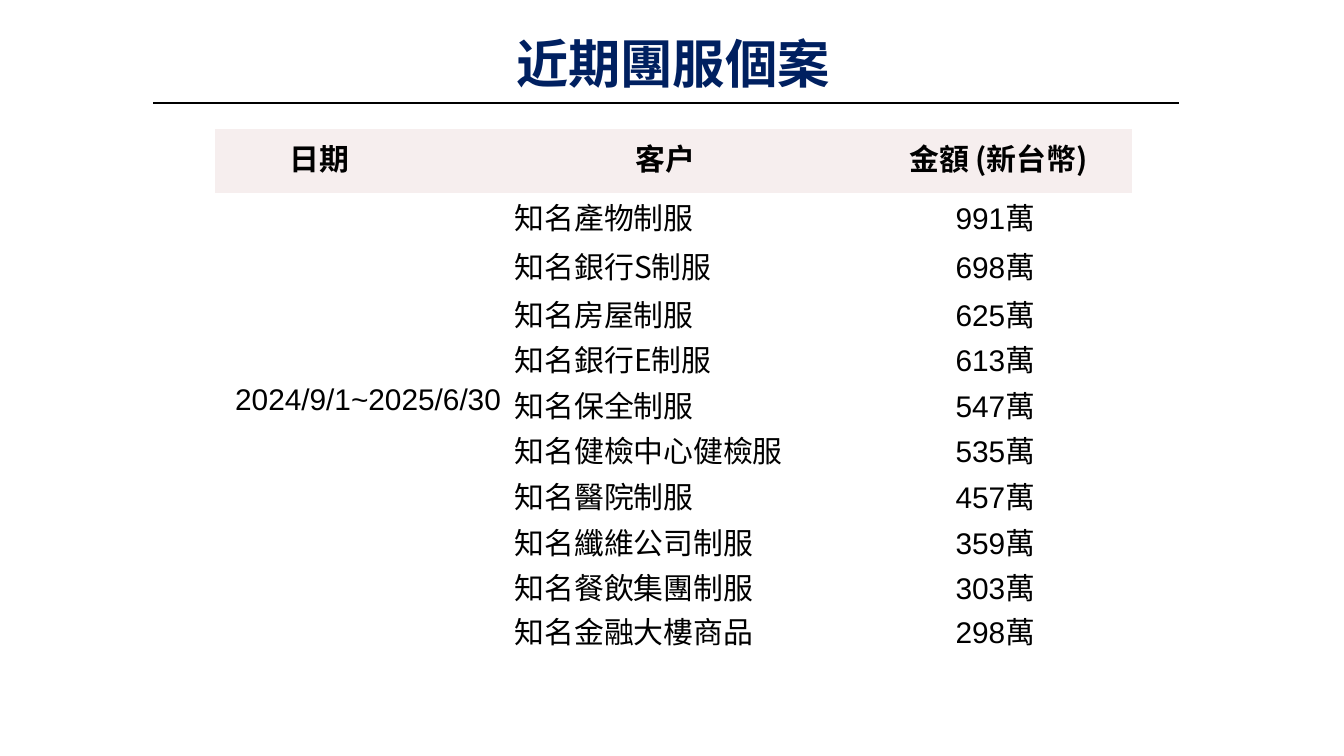
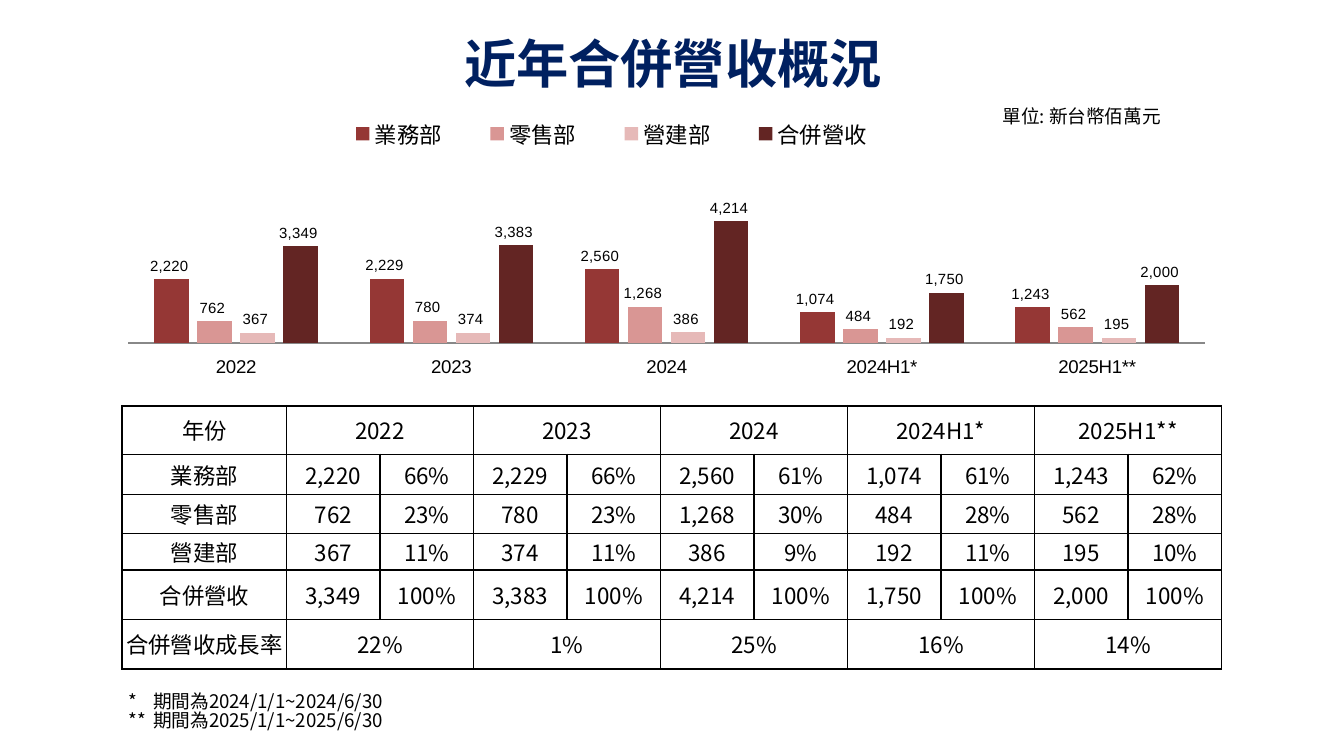
from dataclasses import dataclass

from lxml import etree
from pptx import Presentation
from pptx import util as u
from pptx.chart import data as chart_data
from pptx.dml import color as dml
from pptx.enum import chart as charts, shapes, text
from pptx.oxml import ns

Pt = u.Pt
CENTER, LEFT = text.PP_ALIGN.CENTER, text.PP_ALIGN.LEFT
MIDDLE, TOP = text.MSO_ANCHOR.MIDDLE, text.MSO_ANCHOR.TOP
NO_GRID_STYLE = "{2D5ABB26-0587-4C30-8999-92F81FD0307C}"


@dataclass(frozen=True)
class Theme:
    navy: str = "002060"
    black: str = "000000"
    white: str = "FFFFFF"
    header: str = "F6EEEE"
    axis: str = "888888"
    series: tuple = ("953735", "D99694", "E6B9B8", "632523")
    heading_font: str = "Noto Sans CJK TC"
    figure_font: str = "Noto Sans CJK SC"
    latin_font: str = "Arial"
    title: float = 28
    case: float = 16
    body: float = 12
    note: float = 10
    label: float = 8


def assign(target, formats):
    for name, value in formats.items():
        setattr(target, name, value)


def rgb(value):
    return dml.RGBColor.from_string(value)


def manual_layout(x, y, width, height, inner=False):
    layout = etree.Element(ns.qn("c:layout"))
    manual = etree.SubElement(layout, ns.qn("c:manualLayout"))
    values = {"layoutTarget": "inner"} if inner else {}
    values |= {"xMode": "edge", "yMode": "edge", "x": x, "y": y, "w": width, "h": height}
    for name, value in values.items():
        etree.SubElement(manual, ns.qn(f"c:{name}"), val=str(value))
    return layout


class Deck:
    def __init__(self, theme):
        self.theme = theme
        self.presentation = Presentation()
        assign(self.presentation, {"slide_width": Pt(720), "slide_height": Pt(405)})
        self.slide = None

    # Text
    def style_font(self, font, size, name=None, color=None, bold=False):
        name = name or self.theme.heading_font
        assign(font, {"size": Pt(size), "name": name, "bold": bold})
        font.color.rgb = rgb(color or self.theme.black)
        east_asian = self.theme.heading_font if name == self.theme.latin_font else name
        etree.SubElement(font._rPr, ns.qn("a:ea"), typeface=east_asian)

    def fill_text(self, frame, lines, align=LEFT, spacing=None, hanging=0, **font):
        for index, line in enumerate(lines):
            paragraph = frame.paragraphs[0] if index == 0 else frame.add_paragraph()
            assign(paragraph, {"alignment": align, "line_spacing": spacing})
            if hanging:
                properties = paragraph._p.get_or_add_pPr()
                properties.set("marL", str(Pt(hanging)))
                properties.set("indent", str(-Pt(hanging)))
            run = paragraph.add_run()
            run.text = line
            self.style_font(run.font, **font)

    def text_box(self, box, lines, anchor=TOP, fill=None, **formats):
        shape = self.slide.shapes.add_textbox(*map(Pt, box))
        if fill:
            shape.fill.solid()
            shape.fill.fore_color.rgb = rgb(fill)
        margins = {f"margin_{side}": Pt(3.6) for side in ("left", "top", "right", "bottom")}
        assign(shape.text_frame, {"word_wrap": True, "vertical_anchor": anchor} | margins)
        self.fill_text(shape.text_frame, lines, **formats)

    # Slide frame
    def add_slide(self, title, ruled=True):
        self.slide = self.presentation.slides.add_slide(self.presentation.slide_layouts[6])
        if ruled:
            self.rule(82, 631.5, 55.4)
        self.text_box((36.5, 0, 648, 67.5), [title], MIDDLE,
                      fill=None if ruled else self.theme.white, align=CENTER,
                      size=self.theme.title, color=self.theme.navy, bold=True)

    def rule(self, left, right, y):
        line = self.slide.shapes.add_connector(
            shapes.MSO_CONNECTOR.STRAIGHT, Pt(left), Pt(y), Pt(right), Pt(y))
        line.line.width = Pt(1)
        line.line.color.rgb = rgb(self.theme.black)
        etree.SubElement(line._element.spPr, ns.qn("a:effectLst"))

    # Tables
    def table(self, left, top, widths, heights):
        table = self.slide.shapes.add_table(
            len(heights), len(widths), Pt(left), Pt(top), Pt(sum(widths)), Pt(sum(heights))).table
        assign(table, {"first_row": False, "horz_banding": False})
        table._tbl.tblPr.find(ns.qn("a:tableStyleId")).text = NO_GRID_STYLE
        for column, width in zip(table.columns, widths):
            column.width = Pt(width)
        for row, height in zip(table.rows, heights):
            row.height = Pt(height)
        return table

    def cell(self, cell, value, margins=(0.7, 0, 0.7, 0), anchor=MIDDLE, fill=None, **formats):
        sides = ("margin_left", "margin_top", "margin_right", "margin_bottom")
        assign(cell, dict(zip(sides, map(Pt, margins))) | {"vertical_anchor": anchor})
        if fill:
            cell.fill.solid()
            cell.fill.fore_color.rgb = rgb(fill)
        else:
            cell.fill.background()
        self.fill_text(cell.text_frame, [value], **formats)

    def grid(self, table):
        for cell in (cell for row in table.rows for cell in row.cells):
            properties = cell._tc.get_or_add_tcPr()
            for side in ("lnL", "lnR", "lnT", "lnB"):
                line = etree.SubElement(properties, ns.qn(f"a:{side}"), w=str(Pt(1)))
                fill = etree.SubElement(line, ns.qn("a:solidFill"))
                etree.SubElement(fill, ns.qn("a:srgbClr"), val=self.theme.black)

    # Chart
    def column_chart(self, box, categories, series):
        theme, number_format = self.theme, '#,##0" "'
        data = chart_data.CategoryChartData()
        data.categories = categories
        for name, values in series.items():
            data.add_series(name, values)
        chart = self.slide.shapes.add_chart(
            charts.XL_CHART_TYPE.COLUMN_CLUSTERED, *map(Pt, box), data).chart
        self.style_font(chart.font, theme.note, "Calibri")
        assign(chart, {"has_title": False, "has_legend": True})

        # Legend
        assign(chart.legend, {"position": charts.XL_LEGEND_POSITION.TOP,
                              "include_in_layout": True})
        self.style_font(chart.legend.font, theme.body)
        position = chart.legend._element.find(ns.qn("c:legendPos"))
        position.addnext(manual_layout(0.19, 0.01, 0.54, 0.13))

        # Plot
        area = chart._chartSpace.chart.plotArea
        for layout in area.findall(ns.qn("c:layout")):
            area.remove(layout)
        area.insert(0, manual_layout(0.02, 0.33, 0.98, 0.55, inner=True))
        plot = chart.plots[0]
        assign(plot, {"gap_width": 150, "overlap": -25, "vary_by_categories": False})
        for item, color in zip(plot.series, theme.series):
            item.format.fill.solid()
            item.format.fill.fore_color.rgb = rgb(color)
            labels = item.data_labels
            assign(labels, {"show_value": True, "number_format": number_format,
                            "number_format_is_linked": False,
                            "position": charts.XL_LABEL_POSITION.OUTSIDE_END})
            self.style_font(labels.font, theme.label, theme.latin_font)

        # Axes
        ticks = charts.XL_TICK_LABEL_POSITION
        for axis, tick_labels, size in ((chart.category_axis, ticks.LOW, theme.note),
                                        (chart.value_axis, ticks.NONE, theme.label)):
            assign(axis, {"major_tick_mark": charts.XL_TICK_MARK.NONE,
                          "minor_tick_mark": charts.XL_TICK_MARK.NONE,
                          "tick_label_position": tick_labels,
                          "has_major_gridlines": False})
            self.style_font(axis.tick_labels.font, size, theme.latin_font)
        chart.category_axis.format.line.width = Pt(1)
        chart.category_axis.format.line.color.rgb = rgb(theme.axis)
        chart.value_axis.format.line.fill.background()
        chart.value_axis.major_unit = 550
        assign(chart.value_axis.tick_labels, {"number_format": number_format,
                                              "number_format_is_linked": False})


CASES = {
    "知名產物制服": 991, "知名銀行S制服": 698, "知名房屋制服": 625, "知名銀行E制服": 613,
    "知名保全制服": 547, "知名健檢中心健檢服": 535, "知名醫院制服": 457,
    "知名纖維公司制服": 359, "知名餐飲集團制服": 303, "知名金融大樓商品": 298,
}
PERIODS = ["2022", "2023", "2024", "2024H1*", "2025H1**"]
TOTAL = "合併營收"
REVENUE = {
    "業務部": [2220, 2229, 2560, 1074, 1243],
    "零售部": [762, 780, 1268, 484, 562],
    "營建部": [367, 374, 386, 192, 195],
    TOTAL: [3349, 3383, 4214, 1750, 2000],
}
GROWTH = ["22%", "1%", "25%", "16%", "14%"]


def build_cases(deck):
    theme = deck.theme
    deck.add_slide("近期團服個案")
    heights = [34.5, 25, 27.5, 24, 24.5, 24, 24.5, 25, 24, 24, 24]
    table = deck.table(115.2, 69.1, [160, 185, 146], heights)

    # Header, each heading with its own indent
    headings = (("日期", 40), ("客戶", 65.5), ("金額 (新台幣)", 27))
    for column, (heading, indent) in enumerate(headings):
        deck.cell(table.cell(0, column), heading, (indent, 3.6, 0, 3.6), TOP,
                  theme.header, size=theme.case, bold=True)

    # One period for all cases
    table.cell(1, 0).merge(table.cell(len(CASES), 0))
    deck.cell(table.cell(1, 0), "2024/9/1~2025/6/30", (8, 0, 4, 25), align=CENTER,
              size=theme.case, name=theme.latin_font)
    for row, (client, amount) in enumerate(CASES.items(), 1):
        deck.cell(table.cell(row, 1), client, size=theme.case)
        deck.cell(table.cell(row, 2), f"{amount}萬", align=CENTER,
                  size=theme.case, name=theme.latin_font)


def build_revenue(deck):
    theme = deck.theme
    deck.add_slide("近年合併營收概況", ruled=False)
    deck.column_chart((57, 61.2, 589, 141), PERIODS, REVENUE)

    # Revenue table: two columns, value and share, for each period
    table = deck.table(65.5, 217.4, [88] + [50.1] * 2 * len(PERIODS),
                       [26, 21.5, 21, 19.5, 26.5, 26.5])
    deck.grid(table)
    label = {"align": CENTER, "size": theme.body}
    figure = label | {"name": theme.figure_font}
    for row, name in enumerate(["年份", *REVENUE, "合併營收成長率"]):
        deck.cell(table.cell(row, 0), name, **label)
    for index, period in enumerate(PERIODS):
        column = 1 + 2 * index
        for row, value in ((0, period), (len(REVENUE) + 1, GROWTH[index])):
            table.cell(row, column).merge(table.cell(row, column + 1))
            deck.cell(table.cell(row, column), value, **figure)
        for row, values in enumerate(REVENUE.values(), 1):
            share = values[index] / REVENUE[TOTAL][index]
            deck.cell(table.cell(row, column), f"{values[index]:,}", **figure)
            deck.cell(table.cell(row, column + 1), f"{share:.0%}", **figure)

    # Unit and footnotes
    deck.text_box((533.5, 54.7, 93, 32), ["單位: 新台幣佰萬元"], spacing=0.85, size=theme.note)
    deck.text_box((65.5, 368, 299, 32),
                  ["*\t期間為2024/1/1~2024/6/30", "**\t期間為2025/1/1~2025/6/30"],
                  spacing=0.85, hanging=13, size=theme.note, name=theme.figure_font)


def main():
    deck = Deck(Theme())
    build_cases(deck)
    build_revenue(deck)
    deck.presentation.save("out.pptx")


if __name__ == "__main__":
    main()
